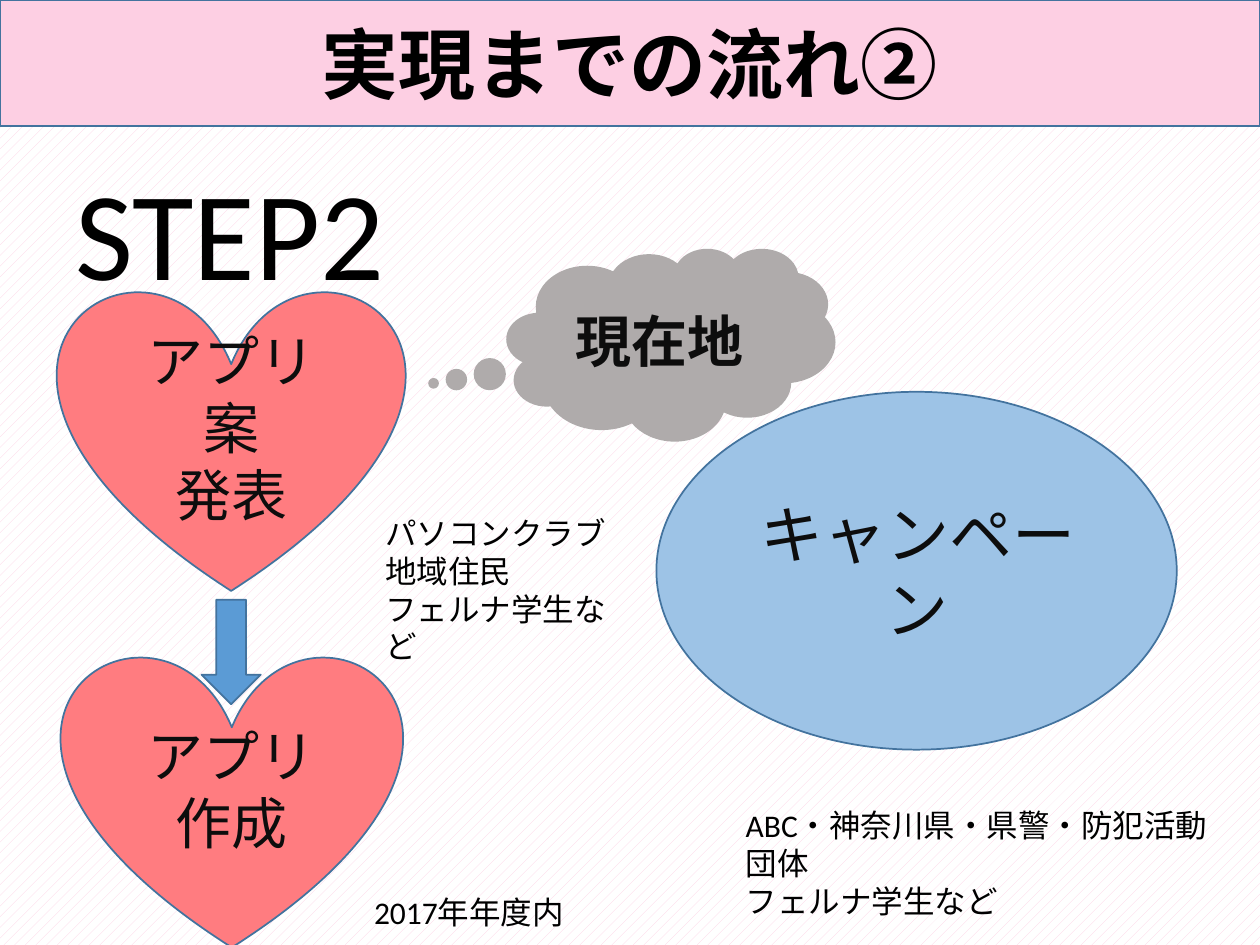
from dataclasses import dataclass, field
from typing import Any

from lxml.etree import SubElement
from pptx import Presentation
from pptx.dml.color import RGBColor
from pptx.enum.dml import MSO_PATTERN
from pptx.enum.shapes import MSO_SHAPE
from pptx.enum.text import MSO_ANCHOR, MSO_AUTO_SIZE, PP_ALIGN
from pptx.oxml.ns import qn
from pptx.util import Inches, Pt

COLUMNS, ROWS = 100, 75
WIDTH, HEIGHT = Inches(10), Inches(7.5)
BLACK, INK, WHITE = "000000", "0D0D0D", "FFFFFF"
PINK, CORAL, BORDER = "FDCFE3", "FF7C80", "43739E"


@dataclass
class Place:
    """Left, top, width and height in grid columns and rows."""
    left: float
    top: float
    width: float
    height: float

    def lengths(self) -> tuple[int, int, int, int]:
        """Return the place as slide lengths."""
        column, row = WIDTH / COLUMNS, HEIGHT / ROWS
        return (round(self.left * column), round(self.top * row),
                round(self.width * column), round(self.height * row))


@dataclass
class Words:
    """Lines of text with one common format."""
    lines: list[str]
    size: float
    color: str = INK
    font: str = "Calibri"
    bold: bool = False
    outline: str = ""


@dataclass
class Figure:
    """A preset shape, with its fill, border and words."""
    kind: MSO_SHAPE
    place: Place
    fill: str
    words: Words | None = None
    border: str = BORDER
    adjustments: list[float] = field(default_factory=list)


@dataclass
class Note:
    """A plain text box."""
    place: Place
    words: Words


HEADER = Figure(MSO_SHAPE.RECTANGLE, Place(0, 0, COLUMNS, 10), PINK,
                Words(["実現までの流れ②"], 44, BLACK, "Cambria", True, WHITE))

ITEMS = [
    HEADER,
    Figure(MSO_SHAPE.CLOUD_CALLOUT, Place(40.2, 19.7, 26.1, 15.3), "AFABAB",
           Words(["現在地"], 32, bold=True), "", [-0.722, 0.201]),
    Figure(MSO_SHAPE.HEART, Place(4.6, 22.9, 27.5, 24), CORAL,
           Words(["アプリ案", "発表"], 32)),
    Figure(MSO_SHAPE.OVAL, Place(52.1, 31.1, 41.3, 28.4), "9DC3E6",
           Words(["キャンペーン"], 36)),
    Note(Place(5, 11.8, 29.9, 13.1), Words(["STEP2"], 72, BLACK)),
    Figure(MSO_SHAPE.HEART, Place(4.9, 51.9, 27, 23.3), CORAL,
           Words(["アプリ", "作成"], 32)),
    Note(Place(29.6, 40.3, 20, 10.1),
         Words(["パソコンクラブ", "地域住民", "フェルナ学生など"], 18, BLACK)),
    Note(Place(58.2, 63.5, 40.1, 7.1),
         Words(["ABC・神奈川県・県警・防犯活動団体", "フェルナ学生など"], 18, BLACK)),
    Figure(MSO_SHAPE.DOWN_ARROW, Place(16, 47.6, 4.7, 8.3), "5B9BD5"),
    Note(Place(28.7, 70.4, 19.2, 4), Words(["2017年年度内"], 18, BLACK)),
]


def rgb(value: str) -> RGBColor:
    """Turn a hex string into a colour."""
    return RGBColor.from_string(value)


def apply(target: Any, values: dict[str, Any]) -> None:
    """Set each attribute named in the values."""
    for name, value in values.items():
        setattr(target, name, value)


def outline_span(span: Any, color: str) -> None:
    """Draw a thin outline around the letters of a run."""
    properties = span.font._element
    line = SubElement(properties, qn("a:ln"), w=str(Pt(0.75)))
    properties.insert(0, line)
    solid = SubElement(line, qn("a:solidFill"))
    SubElement(solid, qn("a:srgbClr"), val=color)


def write(frame: Any, words: Words, align: PP_ALIGN) -> None:
    """Write one paragraph for each line of words."""
    for index, line in enumerate(words.lines):
        para = frame.add_paragraph() if index else frame.paragraphs[0]
        para.alignment = align
        span = para.add_run()
        span.text = line
        apply(span.font, {"size": Pt(words.size), "name": words.font, "bold": words.bold})
        span.font.color.rgb = rgb(words.color)
        if words.outline:
            outline_span(span, words.outline)


def draw_figure(page: Any, figure: Figure) -> None:
    """Draw a filled preset shape with centred words."""
    shape = page.shapes.add_shape(figure.kind, *figure.place.lengths())
    shape.shadow.inherit = False
    for index, value in enumerate(figure.adjustments):
        shape.adjustments[index] = value
    shape.fill.solid()
    shape.fill.fore_color.rgb = rgb(figure.fill)
    if figure.border:
        shape.line.color.rgb = rgb(figure.border)
        shape.line.width = Pt(1)
    else:
        shape.line.fill.background()
    if figure.words:
        apply(shape.text_frame, {"word_wrap": True, "vertical_anchor": MSO_ANCHOR.MIDDLE})
        write(shape.text_frame, figure.words, PP_ALIGN.CENTER)


def draw_note(page: Any, note: Note) -> None:
    """Draw a wrapping text box that grows with its words."""
    box = page.shapes.add_textbox(*note.place.lengths())
    apply(box.text_frame, {"word_wrap": True, "auto_size": MSO_AUTO_SIZE.SHAPE_TO_FIT_TEXT})
    write(box.text_frame, note.words, PP_ALIGN.LEFT)


def paint_background(page: Any) -> None:
    """Give the page a pale pink pattern."""
    fill = page.background.fill
    fill.patterned()
    fill.pattern = MSO_PATTERN.PERCENT_20
    fill.fore_color.rgb = rgb(PINK)
    fill.back_color.rgb = rgb(WHITE)


def main() -> None:
    """Build the slide and save it."""
    deck = Presentation()
    apply(deck, {"slide_width": WIDTH, "slide_height": HEIGHT})
    page = deck.slides.add_slide(deck.slide_layouts[6])
    paint_background(page)
    for item in ITEMS:
        if isinstance(item, Figure):
            draw_figure(page, item)
        else:
            draw_note(page, item)
    deck.save("out.pptx")


if __name__ == "__main__":
    main()
